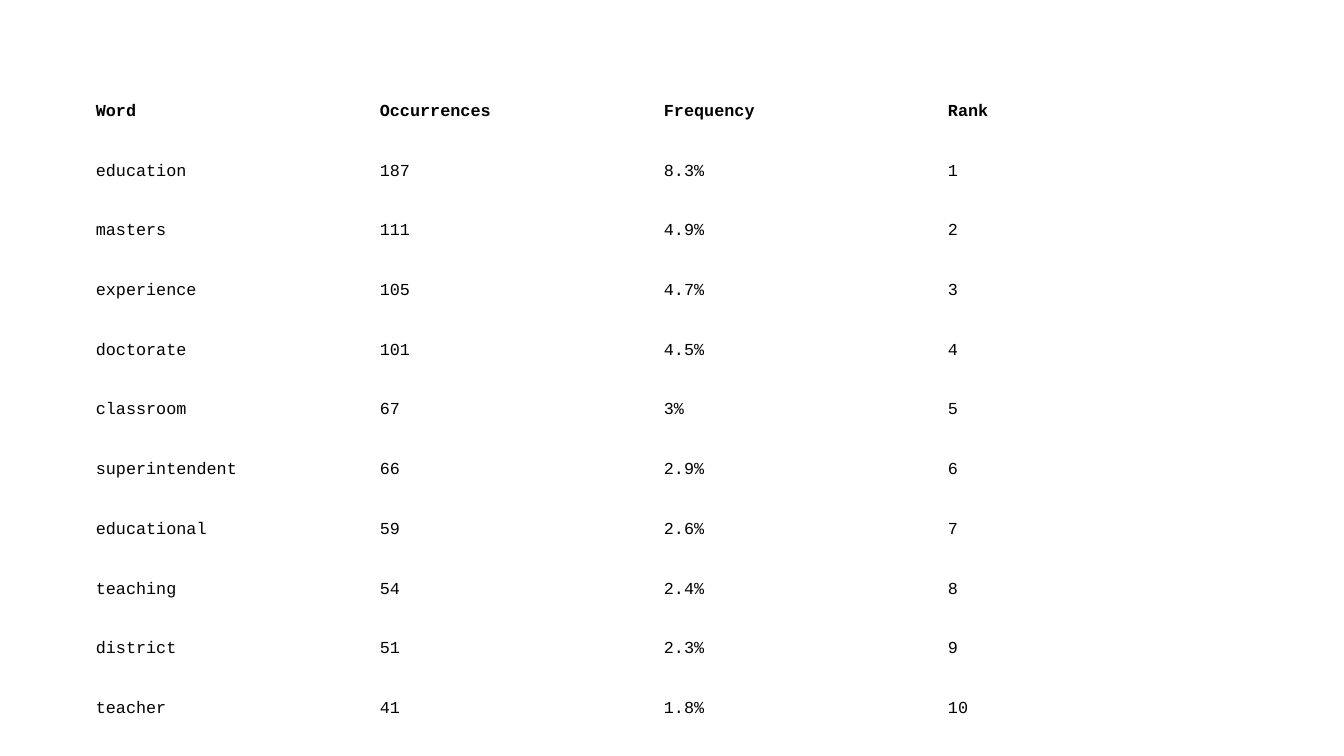
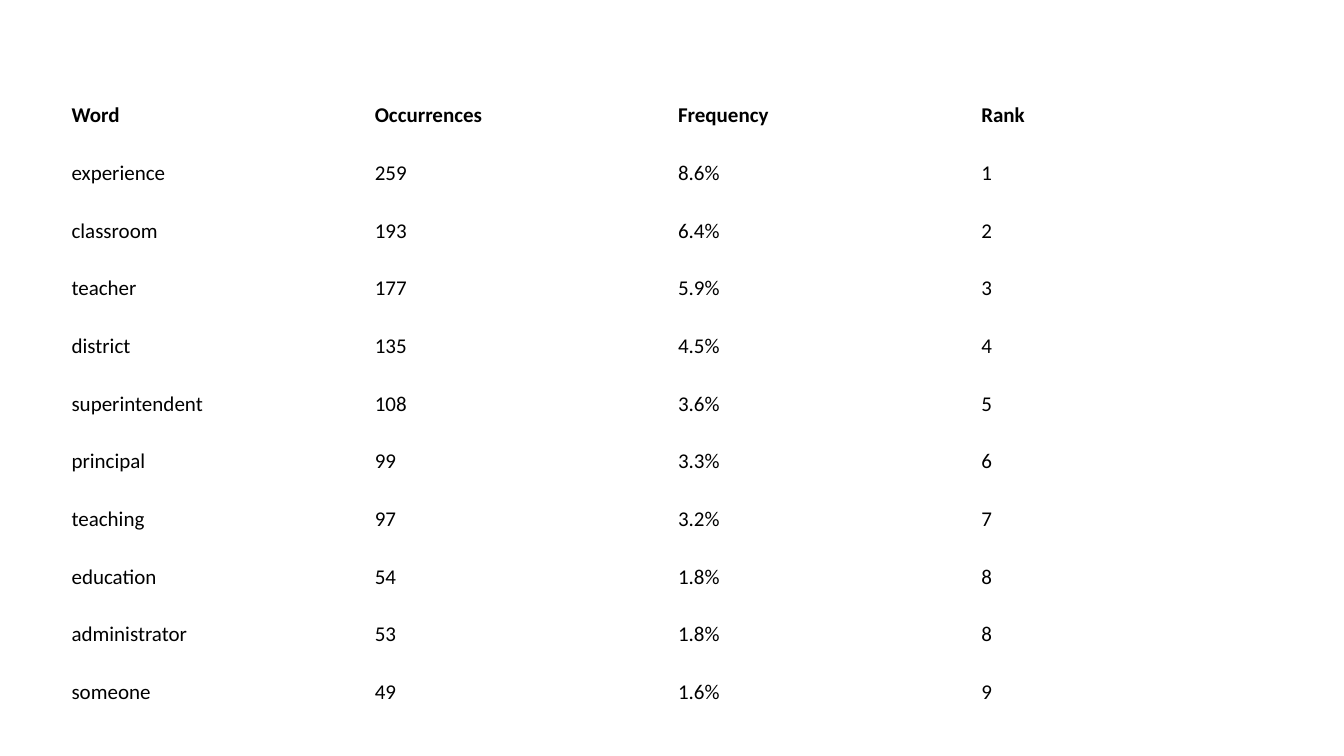
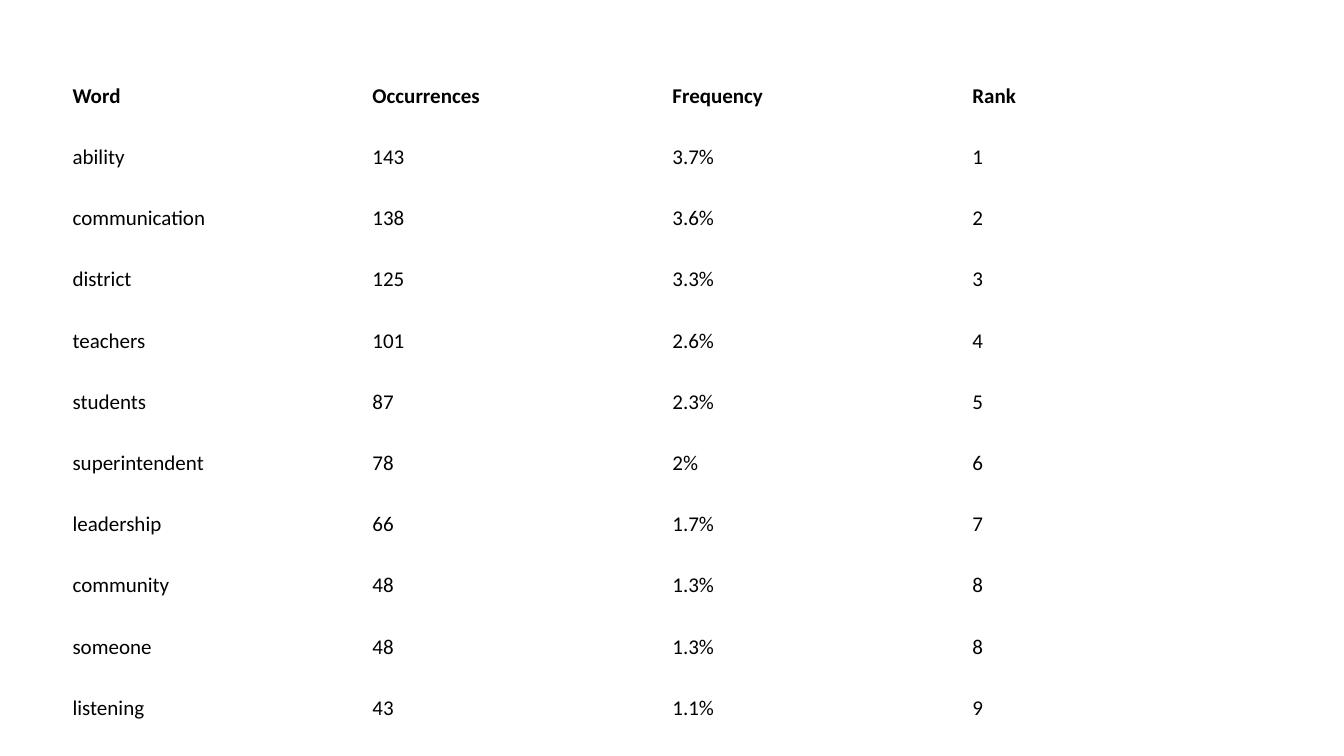
from pptx import Presentation
from pptx import util as u
from pptx.dml.color import RGBColor
from pptx.enum import text

COLORS = {"ink": "000000", "paper": "FFFFFF"}
HEAD = ("Word", "Occurrences", "Frequency", "Rank")

MONO = {"font": "Courier New", "size": 12, "inset": 0.1, "spacing": 1.15}
SANS = {"font": "Calibri", "size": 15, "inset": 0.09}

SLIDES = [
    {
        "box": (0.85, 0.8, 11.27, 6.52),
        "style": MONO,
        "rows": [
            ("education", "187", "8.3%", "1"),
            ("masters", "111", "4.9%", "2"),
            ("experience", "105", "4.7%", "3"),
            ("doctorate", "101", "4.5%", "4"),
            ("classroom", "67", "3%", "5"),
            ("superintendent", "66", "2.9%", "6"),
            ("educational", "59", "2.6%", "7"),
            ("teaching", "54", "2.4%", "8"),
            ("district", "51", "2.3%", "9"),
            ("teacher", "41", "1.8%", "10"),
        ],
    },
    {
        "box": (0.62, 0.86, 12.03, 6.3),
        "style": SANS,
        "rows": [
            ("experience", "259", "8.6%", "1"),
            ("classroom", "193", "6.4%", "2"),
            ("teacher", "177", "5.9%", "3"),
            ("district", "135", "4.5%", "4"),
            ("superintendent", "108", "3.6%", "5"),
            ("principal", "99", "3.3%", "6"),
            ("teaching", "97", "3.2%", "7"),
            ("education", "54", "1.8%", "8"),
            ("administrator", "53", "1.8%", "8"),
            ("someone", "49", "1.6%", "9"),
        ],
    },
    {
        "box": (0.63, 0.65, 11.9, 6.68),
        "style": SANS,
        "rows": [
            ("ability", "143", "3.7%", "1"),
            ("communication", "138", "3.6%", "2"),
            ("district", "125", "3.3%", "3"),
            ("teachers", "101", "2.6%", "4"),
            ("students", "87", "2.3%", "5"),
            ("superintendent", "78", "2%", "6"),
            ("leadership", "66", "1.7%", "7"),
            ("community", "48", "1.3%", "8"),
            ("someone", "48", "1.3%", "8"),
            ("listening", "43", "1.1%", "9"),
        ],
    },
]


def color(name):
    return RGBColor.from_string(COLORS[name])


def write(cell, words, font, size, inset, spacing=None, bold=False):
    cell.fill.solid()
    cell.fill.fore_color.rgb = color("paper")
    cell.vertical_anchor = text.MSO_ANCHOR.MIDDLE
    cell.margin_left = cell.margin_right = u.Inches(inset)
    cell.margin_top = cell.margin_bottom = u.Inches(inset)
    para = cell.text_frame.paragraphs[0]
    if spacing:
        para.line_spacing = spacing
    run = para.add_run()
    run.text = words
    run.font.name = font
    run.font.size = u.Pt(size)
    run.font.bold = bold
    run.font.color.rgb = color("ink")


def add_words(slide, box, style, rows):
    grid = [HEAD] + rows
    place = [u.Inches(side) for side in box]
    table = slide.shapes.add_table(len(grid), len(HEAD), *place).table
    table.horz_banding = False
    for r, row in enumerate(grid):
        for c, words in enumerate(row):
            write(table.cell(r, c), words, bold=r == 0, **style)


def main():
    deck = Presentation()
    deck.slide_width = u.Inches(13.33)
    deck.slide_height = u.Inches(7.5)
    blank = deck.slide_layouts[6]
    for page in SLIDES:
        add_words(deck.slides.add_slide(blank), **page)
    deck.save("out.pptx")


if __name__ == "__main__":
    main()
